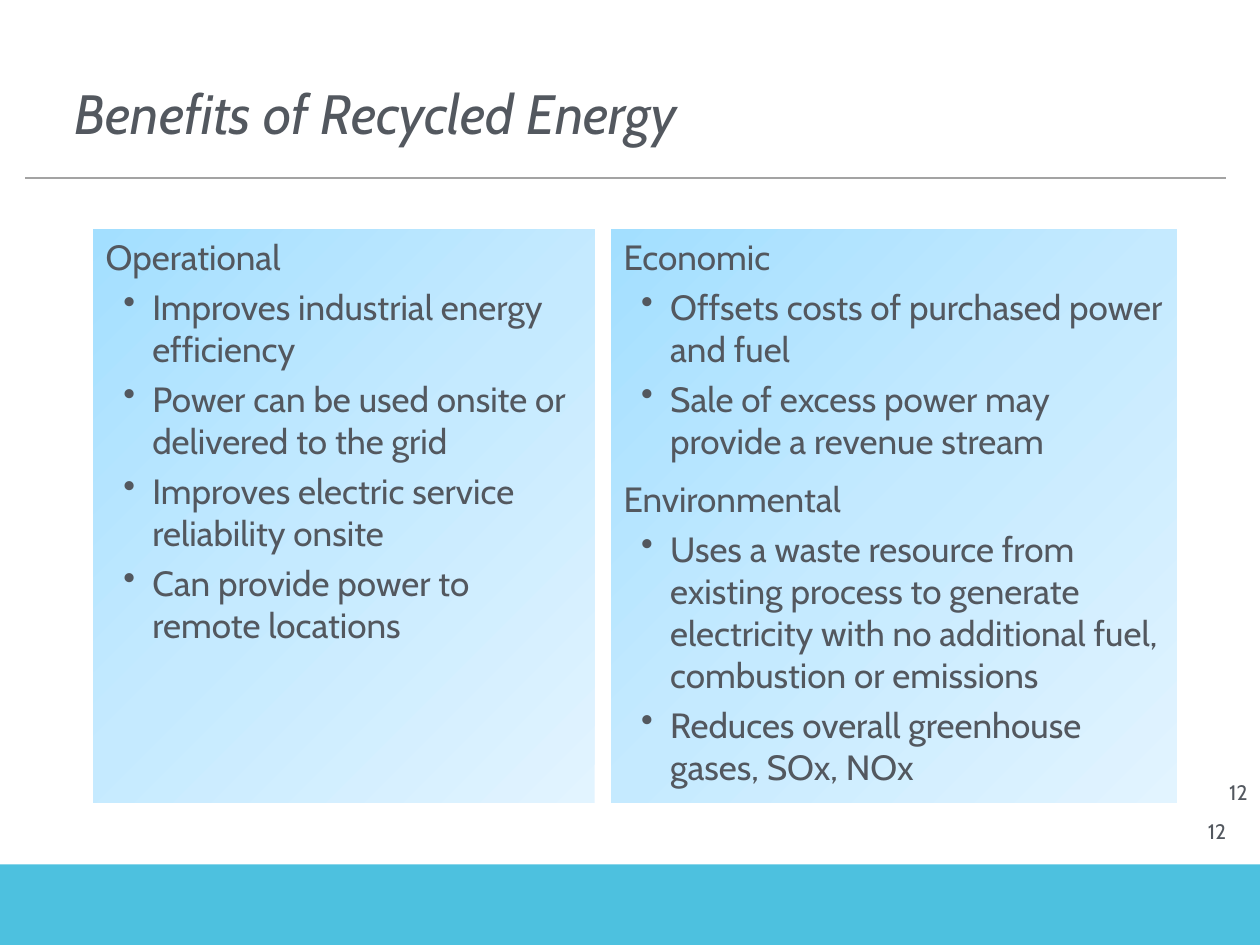
from dataclasses import dataclass

from lxml import etree
from pptx import Presentation
from pptx.dml.color import RGBColor
from pptx.enum.shapes import MSO_CONNECTOR, MSO_SHAPE
from pptx.enum.text import MSO_ANCHOR, PP_ALIGN
from pptx.oxml.ns import qn
from pptx.util import Inches, Pt

RECTANGLE = MSO_SHAPE.RECTANGLE
STRAIGHT = MSO_CONNECTOR.STRAIGHT
LEFT, RIGHT = PP_ALIGN.LEFT, PP_ALIGN.RIGHT
TOP, MIDDLE = MSO_ANCHOR.TOP, MSO_ANCHOR.MIDDLE


@dataclass(frozen=True)
class Theme:
    font: str = "Cabin"
    text: str = "53585F"
    rule: str = "A3A3A3"
    band: str = "4DC1DF"
    panel: tuple = ((0, "A3DFFF"), (50, "C5EAFF"), (100, "E2F4FF"))
    title_size: float = 31.6
    body_size: float = 20
    number_size: float = 12
    gap: float = 4.5


THEME = Theme()

OPERATIONAL = ("Operational", (
    "Improves industrial energy efficiency",
    "Power can be used onsite or delivered to the grid",
    "Improves electric service reliability onsite",
    "Can provide power to remote locations",
))
ECONOMIC = ("Economic", (
    "Offsets costs of purchased power and fuel",
    "Sale of excess power may provide a revenue stream",
))
ENVIRONMENTAL = ("Environmental", (
    "Uses a waste resource from existing process to generate electricity "
    "with no additional fuel, combustion or emissions",
    "Reduces overall greenhouse gases, SOx, NOx",
))


def add_span(para, text, size, italic=False):
    span = para.add_run()
    span.text = text
    span.font.name = THEME.font
    span.font.size = Pt(size)
    span.font.italic = italic
    span.font.color.rgb = RGBColor.from_string(THEME.text)


def set_bullet(para, left, hanging):
    properties = para._p.get_or_add_pPr()
    properties.set("marL", str(Inches(left)))
    properties.set("indent", str(-Inches(hanging)))
    etree.SubElement(properties, qn("a:buChar"), char="•")


def fill_from_corner(shape, stops):
    """Fill with a gradient that spreads from the top left corner."""
    shape.fill.gradient()
    gradient = shape._element.spPr.find(qn("a:gradFill"))
    for child in list(gradient):
        gradient.remove(child)
    stop_list = etree.SubElement(gradient, qn("a:gsLst"))
    for percent, color in stops:
        stop = etree.SubElement(stop_list, qn("a:gs"), pos=str(percent * 1000))
        etree.SubElement(stop, qn("a:srgbClr"), val=color)
    spread = etree.SubElement(gradient, qn("a:path"), path="circle")
    etree.SubElement(spread, qn("a:fillToRect"), r="100000", b="100000")


def add_band(page, box):
    band = page.shapes.add_shape(RECTANGLE, *map(Inches, box))
    band.shadow.inherit = False
    band.fill.solid()
    band.fill.fore_color.rgb = RGBColor.from_string(THEME.band)
    band.line.fill.background()


def add_rule(page, left, top, width):
    rule = page.shapes.add_connector(
        STRAIGHT, Inches(left), Inches(top), Inches(left + width), Inches(top))
    rule.line.color.rgb = RGBColor.from_string(THEME.rule)
    rule.line.width = Pt(1)
    etree.SubElement(rule._element.spPr, qn("a:effectLst"))


def set_title(page, box, text):
    title = page.shapes.title
    title.left, title.top, title.width, title.height = map(Inches, box)
    frame = title.text_frame
    frame.word_wrap = True
    frame.vertical_anchor = MIDDLE
    para = frame.paragraphs[0]
    para.alignment = LEFT
    add_span(para, text, THEME.title_size, italic=True)


def add_panel(page, box, groups):
    panel = page.shapes.add_shape(RECTANGLE, *map(Inches, box))
    panel.shadow.inherit = False
    fill_from_corner(panel, THEME.panel)
    panel.line.fill.background()
    frame = panel.text_frame
    frame.word_wrap = True
    frame.vertical_anchor = TOP
    for index, (heading, points) in enumerate(groups):
        para = frame.add_paragraph() if index else frame.paragraphs[0]
        para.alignment = LEFT
        if index:
            para.space_before = Pt(THEME.gap)
        add_span(para, heading, THEME.body_size)
        for point in points:
            para = frame.add_paragraph()
            para.level = 1
            set_bullet(para, left=0.37, hanging=0.23)
            para.alignment = LEFT
            para.space_before = Pt(THEME.gap)
            add_span(para, point, THEME.body_size)
        para.space_after = Pt(THEME.gap)


def add_page_number(page, box, number):
    frame = page.shapes.add_textbox(*map(Inches, box)).text_frame
    frame.word_wrap = True
    para = frame.paragraphs[0]
    para.alignment = RIGHT
    add_span(para, number, THEME.number_size)


def main():
    deck = Presentation()
    deck.slide_width, deck.slide_height = Inches(10), Inches(7.5)
    page = deck.slides.add_slide(deck.slide_layouts[5])
    add_band(page, (0, 6.86, 10, 0.64))
    add_rule(page, 0.2, 1.41, 9.53)
    set_title(page, (0.49, 0.41, 8.44, 0.96), "Benefits of Recycled Energy")
    add_panel(page, (0.74, 1.82, 3.98, 4.55), [OPERATIONAL])
    add_panel(page, (4.85, 1.82, 4.49, 4.55), [ECONOMIC, ENVIRONMENTAL])
    for left, top in ((7.75, 6.14), (7.58, 6.45)):
        add_page_number(page, (left, top, 2.25, 0.3), "12")
    deck.save("out.pptx")


if __name__ == "__main__":
    main()
